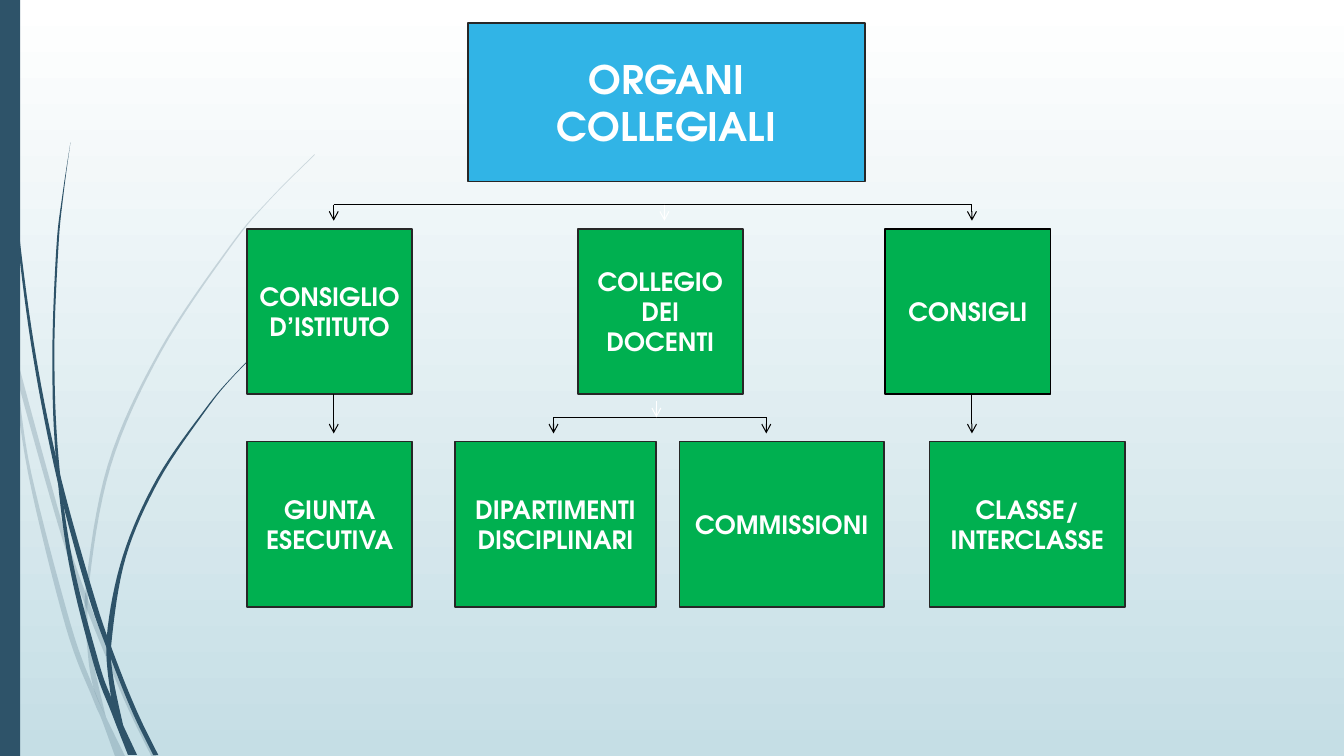
from dataclasses import dataclass

from lxml.etree import SubElement
from pptx import Presentation
from pptx.dml.color import RGBColor
from pptx.enum.shapes import MSO_CONNECTOR, MSO_SHAPE
from pptx.enum.text import MSO_ANCHOR, MSO_AUTO_SIZE, PP_ALIGN
from pptx.oxml.ns import qn
from pptx.util import Inches, Pt


@dataclass(frozen=True)
class Theme:
    font: str = "TeX Gyre Adventor"
    title_size: Pt = Pt(28)
    box_size: Pt = Pt(18)
    border_width: Pt = Pt(1.25)
    line_width: Pt = Pt(0.75)
    white: RGBColor = RGBColor(0xFF, 0xFF, 0xFF)
    black: RGBColor = RGBColor(0x00, 0x00, 0x00)
    border: RGBColor = RGBColor(0x27, 0x27, 0x27)
    blue: RGBColor = RGBColor(0x31, 0xB4, 0xE6)
    green: RGBColor = RGBColor(0x00, 0xB0, 0x50)
    navy: RGBColor = RGBColor(0x2E, 0x53, 0x69)
    mist: RGBColor = RGBColor(0xC5, 0xDE, 0xE5)


THEME = Theme()
BOX_HEIGHT = 1.64
SQUARE = 1.64
ORGANS_TOP, BODIES_TOP = 2.27, 4.38
UPPER_BAR, LOWER_BAR = 2.03, 4.14
ARROW_DROP = 0.16

# Each stem has two edges, both listed from the tip down to the root.
PALE_STEMS = [
    ([(0, 2.99), (0.1, 3.44), (0.17, 3.76), (0.58, 5.22), (0.84, 5.99), (1.23, 6.94), (1.5, 7.5)],
     [(0, 2.82), (0.09, 3.22), (0.14, 3.45), (0.62, 5.2), (0.92, 6.07), (1.27, 6.92), (1.55, 7.5)]),
    ([(0.11, 3.5), (0.28, 4.7), (0.65, 6.21), (0.92, 6.93), (1.01, 7.14), (1.14, 7.5)],
     [(0.11, 3.5), (0.17, 3.76), (0.31, 4.69), (0.7, 6.19), (0.93, 6.83), (1.05, 7.11), (1.24, 7.5)]),
    ([(3.12, 1.53), (2.68, 1.97), (2.28, 2.44), (1.58, 3.48), (1.07, 4.61), (0.85, 5.84),
      (0.87, 6.46), (0.93, 6.83), (1.05, 7.11)],
     [(3.12, 1.54), (2.68, 1.98), (2.29, 2.45), (1.6, 3.49), (1.1, 4.62), (0.88, 5.84),
      (0.91, 6.46), (1.05, 7.11)]),
]
DARK_STEMS = [
    ([(0.03, 0), (0.07, 1.1), (0.17, 2.33), (0.33, 3.55), (0.57, 4.77), (0.88, 5.92),
      (1.11, 6.56), (1.32, 7.08), (1.52, 7.49)],
     [(0.04, 0), (0.08, 1.09), (0.19, 2.32), (0.36, 3.55), (0.6, 4.72), (0.93, 5.9),
      (1.13, 6.49), (1.36, 7.06), (1.57, 7.49)]),
    ([(0.7, 1.41), (0.62, 1.93), (0.56, 2.45), (0.52, 3.49), (0.55, 4.49), (0.68, 5.57),
      (0.93, 6.59), (1.11, 7.08), (1.27, 7.49)],
     [(0.7, 1.41), (0.63, 1.93), (0.58, 2.45), (0.54, 3.49), (0.58, 4.53), (0.72, 5.56),
      (0.98, 6.57), (1.1, 6.91), (1.22, 7.19), (1.36, 7.49)]),
    ([(2.6, 3.44), (2.31, 3.73), (2.04, 4.05), (1.56, 4.74), (1.22, 5.51), (1.06, 6.31),
      (1.1, 6.91), (1.17, 7.22)],
     [(2.61, 3.44), (2.31, 3.74), (2.05, 4.06), (1.58, 4.76), (1.25, 5.52), (1.11, 6.33),
      (1.12, 6.7), (1.22, 7.19)]),
]


def smooth(points, steps=8):
    """Return points along a Catmull-Rom curve through the given points."""
    padded = [points[0], *points, points[-1]]
    curve = []
    for a, b, c, d in zip(padded, padded[1:], padded[2:], padded[3:]):
        for step in range(steps):
            t = step / steps
            curve.append(tuple(
                0.5 * (2 * q + (r - p) * t + (2 * p - 5 * q + 4 * r - s) * t ** 2
                       + (3 * q - p - 3 * r + s) * t ** 3)
                for p, q, r, s in zip(a, b, c, d)))
    return curve + [points[-1]]


def set_background(slide):
    fill = slide.background.fill
    fill.gradient()
    fill.gradient_angle = 270
    for stop, color in zip(fill.gradient_stops, (THEME.white, THEME.mist)):
        stop.color.rgb = color


def fill_plain(shape, color):
    shape.shadow.inherit = False
    shape.fill.solid()
    shape.fill.fore_color.rgb = color
    shape.line.fill.background()


def add_stem(slide, edges, opacity=100):
    left_edge, right_edge = edges
    outline = [(Inches(x), Inches(y))
               for x, y in smooth(left_edge) + smooth(right_edge)[::-1]]
    builder = slide.shapes.build_freeform(*outline[0])
    builder.add_line_segments(outline[1:], close=True)
    stem = builder.convert_to_shape()
    fill_plain(stem, THEME.navy)
    if opacity < 100:
        color = stem._element.spPr.find(qn("a:solidFill")).find(qn("a:srgbClr"))
        SubElement(color, qn("a:alpha"), val=str(opacity * 1000))


def format_box(shape, text, fill, size, border=THEME.border):
    fill_plain(shape, fill)
    shape.line.color.rgb = border
    shape.line.width = THEME.border_width
    frame = shape.text_frame
    frame.text = text
    frame.word_wrap = True
    frame.auto_size = MSO_AUTO_SIZE.NONE
    frame.vertical_anchor = MSO_ANCHOR.MIDDLE
    paragraph = frame.paragraphs[0]
    paragraph.alignment = PP_ALIGN.CENTER
    font = paragraph.font
    font.name, font.size, font.bold = THEME.font, size, True
    font.color.rgb = THEME.white


def add_title(slide, text):
    title = slide.shapes.title
    title.left, title.top = Inches(4.64), Inches(0.23)
    title.width, title.height = Inches(3.94), Inches(1.57)
    format_box(title, text, THEME.blue, THEME.title_size)


def add_box(slide, text, left, top, width=SQUARE, border=THEME.border):
    box = slide.shapes.add_shape(MSO_SHAPE.RECTANGLE, Inches(left), Inches(top),
                                 Inches(width), Inches(BOX_HEIGHT))
    format_box(box, text, THEME.green, THEME.box_size, border)


def add_line(slide, start, end, color=THEME.black, arrow=False):
    connector = slide.shapes.add_connector(
        MSO_CONNECTOR.STRAIGHT, *map(Inches, start), *map(Inches, end))
    connector.line.color.rgb = color
    connector.line.width = THEME.line_width
    if arrow:
        SubElement(connector.line._get_or_add_ln(), qn("a:tailEnd"), type="arrow")
    SubElement(connector._element.spPr, qn("a:effectLst"))


def add_down_arrow(slide, x, top, drop=ARROW_DROP, color=THEME.black):
    add_line(slide, (x, top), (x, top + drop), color, arrow=True)


def main():
    presentation = Presentation()
    presentation.slide_width, presentation.slide_height = Inches(13.33), Inches(7.5)
    slide = presentation.slides.add_slide(presentation.slide_layouts[5])
    set_background(slide)

    for edges in PALE_STEMS:
        add_stem(slide, edges, opacity=20)
    for edges in DARK_STEMS:
        add_stem(slide, edges)
    side_band = slide.shapes.add_shape(MSO_SHAPE.RECTANGLE, 0, 0, Inches(0.2), Inches(7.5))
    fill_plain(side_band, THEME.navy)

    add_title(slide, "ORGANI COLLEGIALI")
    add_box(slide, "CONSIGLIO D’ISTITUTO", 2.45, ORGANS_TOP)
    add_box(slide, "COLLEGIO DEI DOCENTI", 5.73, ORGANS_TOP)
    add_box(slide, "CONSIGLI", 8.78, ORGANS_TOP, border=THEME.black)
    add_box(slide, "GIUNTA ESECUTIVA", 2.45, BODIES_TOP)
    add_box(slide, "DIPARTIMENTI DISCIPLINARI", 4.51, BODIES_TOP, 2)
    add_box(slide, "COMMISSIONI", 6.74, BODIES_TOP, 2.03)
    add_box(slide, "CLASSE/ INTERCLASSE", 9.22, BODIES_TOP, 1.94)

    council_x, councils_x = 3.31, 9.64
    departments_x, committees_x = 5.49, 7.6
    add_line(slide, (council_x, UPPER_BAR), (councils_x, UPPER_BAR))
    add_line(slide, (departments_x, LOWER_BAR), (committees_x, LOWER_BAR))
    for x in (council_x, councils_x):
        add_down_arrow(slide, x, UPPER_BAR)
        add_down_arrow(slide, x, ORGANS_TOP + BOX_HEIGHT, drop=0.39)
    for x in (departments_x, committees_x):
        add_down_arrow(slide, x, LOWER_BAR)
    add_down_arrow(slide, 6.59, UPPER_BAR, color=THEME.white)
    add_down_arrow(slide, 6.51, LOWER_BAR - ARROW_DROP, color=THEME.white)

    presentation.save("out.pptx")


if __name__ == "__main__":
    main()
